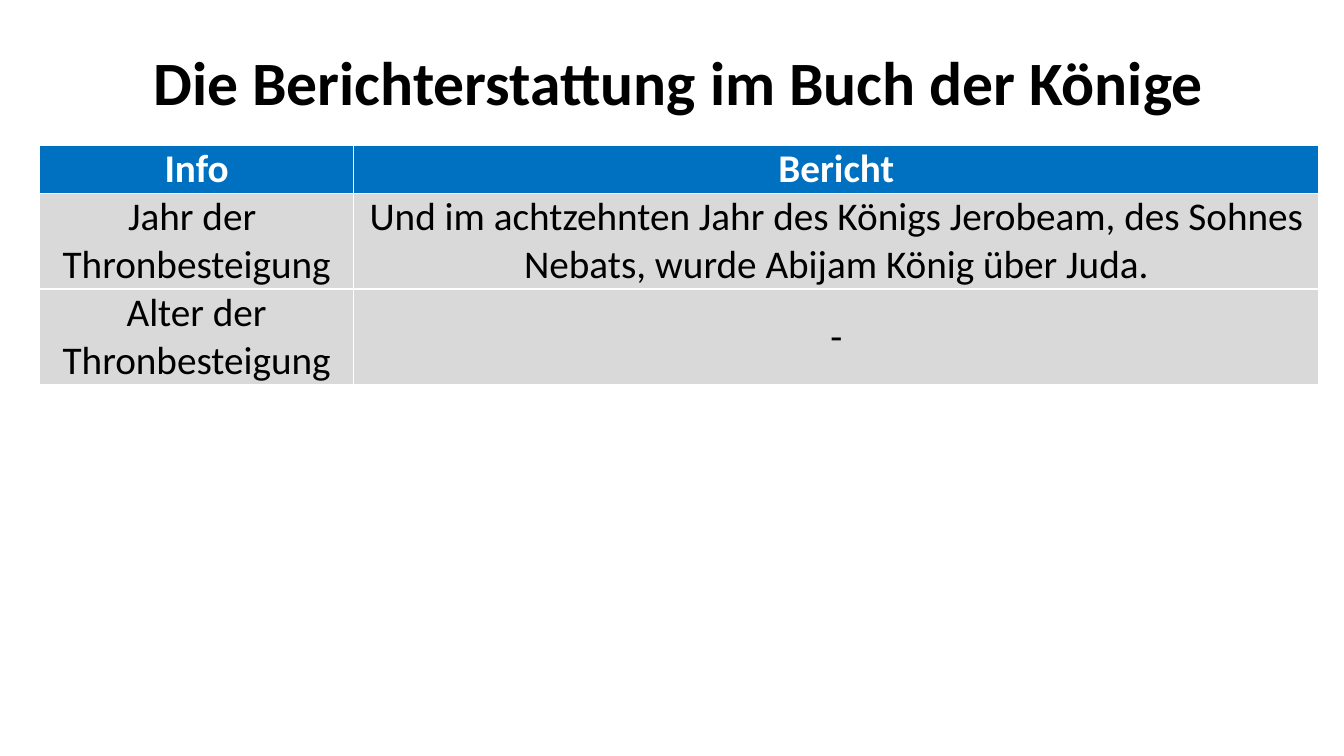
from dataclasses import dataclass

from pptx import Presentation
from pptx import util as u
from pptx.dml.color import RGBColor
from pptx.enum import text


@dataclass(frozen=True)
class Theme:
    font: str = "Calibri"
    ink: str = "000000"
    header_ink: str = "FFFFFF"
    header_fill: str = "0070C0"
    body_fill: str = "D9D9D9"
    title_size: int = 44
    table_size: int = 28


def write(frame, content, *, font, size, color, bold=False, line_spacing=None):
    """Fill a text frame with centred text, one paragraph per line."""
    for index, line in enumerate(content.split("\n")):
        para = frame.add_paragraph() if index else frame.paragraphs[0]
        para.alignment = text.PP_ALIGN.CENTER
        para.line_spacing = line_spacing
        span = para.add_run()
        span.text = line
        span.font.name = font
        span.font.size = u.Pt(size)
        span.font.bold = bold
        span.font.color.rgb = RGBColor.from_string(color)


class SlideBuilder:
    def __init__(self, page, theme):
        self.page = page
        self.theme = theme

    def title(self, content, left, top, width, height):
        box = self.page.shapes.title
        box.left, box.top = u.Inches(left), u.Inches(top)
        box.width, box.height = u.Inches(width), u.Inches(height)
        frame = box.text_frame
        frame.word_wrap = True
        frame.auto_size = text.MSO_AUTO_SIZE.NONE
        frame.vertical_anchor = text.MSO_ANCHOR.MIDDLE
        write(frame, content, font=self.theme.font, size=self.theme.title_size,
              color=self.theme.ink, bold=True, line_spacing=0.9)

    def table(self, rows, left, top, widths, heights):
        """Add a table with a header row; the default style draws its white rules."""
        table = self.page.shapes.add_table(
            len(rows), len(widths), u.Inches(left), u.Inches(top),
            u.Inches(sum(widths)), u.Inches(sum(heights))).table
        table.horz_banding = False
        for column, width in zip(table.columns, widths):
            column.width = u.Inches(width)
        for row, height, contents in zip(table.rows, heights, rows):
            row.height = u.Inches(height)
            for cell, content in zip(row.cells, contents):
                self.cell(cell, content, header=contents is rows[0])

    def cell(self, cell, content, header):
        theme = self.theme
        cell.margin_left = cell.margin_right = u.Inches(0.14)
        cell.margin_top = cell.margin_bottom = 0
        cell.vertical_anchor = text.MSO_ANCHOR.MIDDLE
        cell.fill.solid()
        cell.fill.fore_color.rgb = RGBColor.from_string(
            theme.header_fill if header else theme.body_fill)
        write(cell.text_frame, content, font=theme.font, size=theme.table_size,
              color=theme.header_ink if header else theme.ink, bold=header)


def main():
    deck = Presentation()
    deck.slide_width, deck.slide_height = u.Inches(13.33), u.Inches(7.5)
    title_only = deck.slide_layouts.get_by_name("Title Only")
    builder = SlideBuilder(deck.slides.add_slide(title_only), Theme())
    builder.title("Die Berichterstattung im Buch der Könige", 0.32, 0.4, 12.83, 0.89)
    builder.table(
        [("Info", "Bericht"),
         ("Jahr der \nThronbesteigung",
          "Und im achtzehnten Jahr des Königs Jerobeam, des Sohnes Nebats, "
          "wurde Abijam König über Juda."),
         ("Alter der Thronbesteigung", "-")],
        0.39, 1.44, widths=(3.12, 9.57), heights=(0.47, 0.95, 0.95))
    deck.save("out.pptx")


if __name__ == "__main__":
    main()
